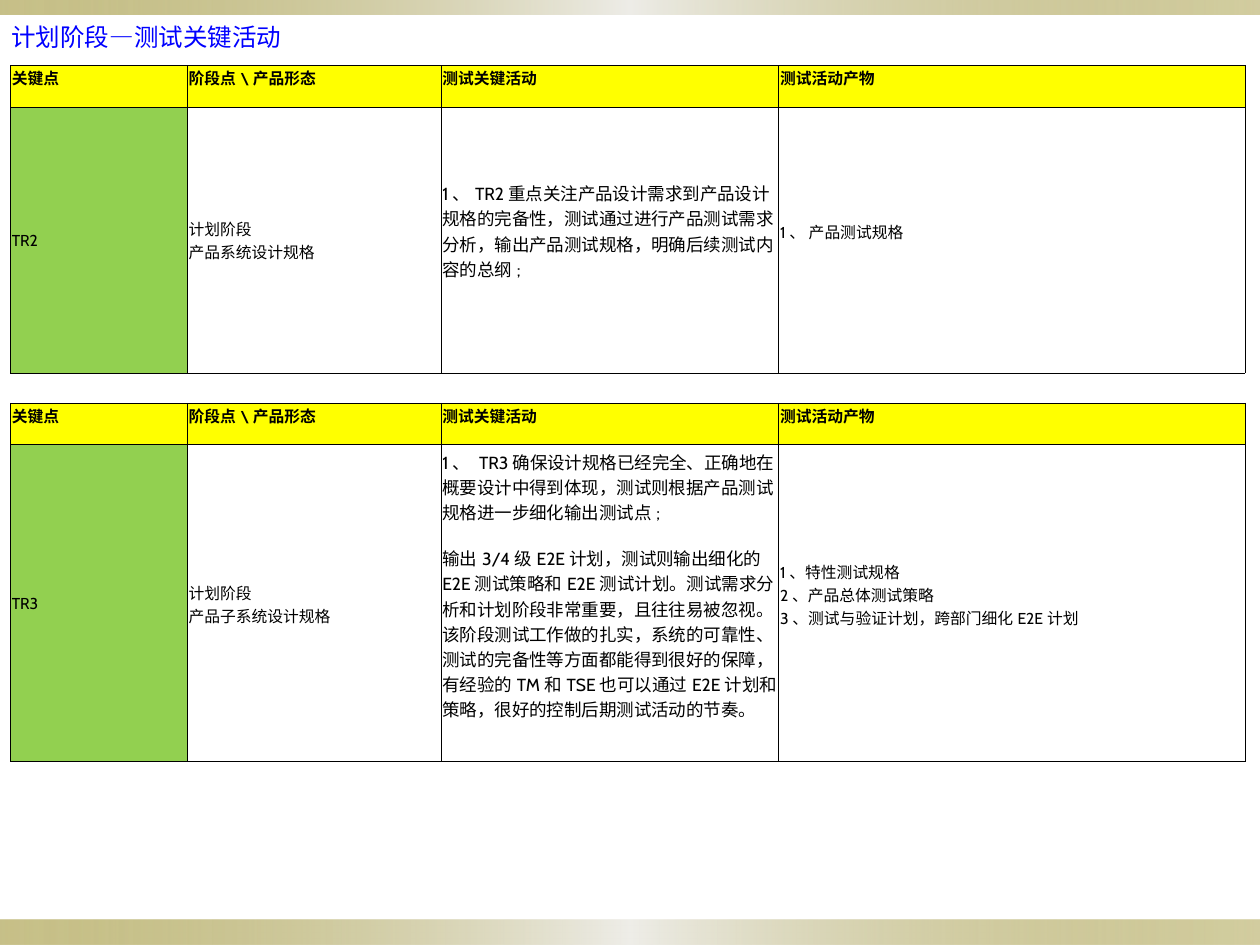
from dataclasses import dataclass

from lxml import etree
from pptx import Presentation
from pptx.dml.color import RGBColor
from pptx.enum.shapes import MSO_SHAPE
from pptx.enum.text import MSO_ANCHOR, MSO_AUTO_SIZE, PP_ALIGN
from pptx.oxml.ns import qn
from pptx.util import Pt

RECTANGLE = MSO_SHAPE.RECTANGLE
TOP, MIDDLE, BOTTOM = MSO_ANCHOR.TOP, MSO_ANCHOR.MIDDLE, MSO_ANCHOR.BOTTOM
LEFT = PP_ALIGN.LEFT
NO_AUTOFIT = MSO_AUTO_SIZE.NONE

BLUE = RGBColor(0x00, 0x00, 0xFF)
BLACK = RGBColor(0x00, 0x00, 0x00)
YELLOW = RGBColor(0xFF, 0xFF, 0x00)
GREEN = RGBColor(0x92, 0xD0, 0x50)
OLIVE = RGBColor(0x91, 0x84, 0x15)
PALE = RGBColor(0xEE, 0xED, 0xE8)

FONT = "Cabin"
SLIDE_WIDTH, SLIDE_HEIGHT = 720, 540
TABLE_LEFT = 6
COLUMN_WIDTHS = (101, 145, 193, 266.5)
HEADER_HEIGHT = 23.75
HEADERS = ("关键点", "阶段点\\产品形态", "测试关键活动", "测试活动产物")
BAR_STOPS = ((0, OLIVE, 50), (50, PALE, 100), (100, OLIVE, 40))


@dataclass(frozen=True)
class CellText:
    lines: tuple[str, ...]
    size: float = 9
    bold: bool = False
    anchor: MSO_ANCHOR = MIDDLE
    fill: RGBColor | None = None
    gap: float = 0
    bottom: float = 0


@dataclass(frozen=True)
class ReviewTable:
    top: float
    body_height: float
    body: tuple[CellText, ...]


TABLES = (
    ReviewTable(37.4, 152, (
        CellText(("TR2",), fill=GREEN),
        CellText(("计划阶段", "产品系统设计规格")),
        CellText(("1、TR2重点关注产品设计需求到产品设计规格的完备性，测试通过进行产品测试需求分析，"
                  "输出产品测试规格，明确后续测试内容的总纲;",), size=10, bottom=11),
        CellText(("1、 产品测试规格",), bottom=10),
    )),
    ReviewTable(230.4, 181, (
        CellText(("TR3",), fill=GREEN),
        CellText(("计划阶段", "产品子系统设计规格")),
        CellText(("1、 TR3确保设计规格已经完全、正确地在概要设计中得到体现，"
                  "测试则根据产品测试规格进一步细化输出测试点;",
                  "输出3/4级E2E计划，测试则输出细化的E2E测试策略和E2E测试计划。"
                  "测试需求分析和计划阶段非常重要，且往往易被忽视。该阶段测试工作做的扎实，"
                  "系统的可靠性、测试的完备性等方面都能得到很好的保障，"
                  "有经验的TM和TSE也可以通过E2E计划和策略，很好的控制后期测试活动的节奏。"),
                 size=10, gap=12, bottom=21),
        CellText(("1、特性测试规格", "2、产品总体测试策略",
                  "3、测试与验证计划，跨部门细化E2E计划"), bottom=10),
    )),
)


def add_bar(slide, top: float, height: float) -> None:
    bar = slide.shapes.add_shape(RECTANGLE, 0, Pt(top), Pt(SLIDE_WIDTH), Pt(height))
    bar.shadow.inherit = False
    bar.line.fill.background()
    bar.fill.gradient()
    bar.fill.gradient_angle = 0
    stops = bar._element.spPr.find(qn("a:gradFill")).find(qn("a:gsLst"))
    for stop in list(stops):
        stops.remove(stop)
    for position, color, opacity in BAR_STOPS:
        stop = etree.SubElement(stops, qn("a:gs"), pos=str(position * 1000))
        value = etree.SubElement(stop, qn("a:srgbClr"), val=str(color))
        etree.SubElement(value, qn("a:alpha"), val=str(opacity * 1000))


def add_title(slide, text: str) -> None:
    title = slide.shapes.title
    title.left, title.top, title.width, title.height = Pt(-0.7), Pt(8.6), Pt(703.5), Pt(24.5)
    frame = title.text_frame
    frame.text = text
    frame.auto_size = NO_AUTOFIT
    frame.vertical_anchor = BOTTOM
    paragraph = frame.paragraphs[0]
    paragraph.alignment = LEFT
    paragraph.font.name = FONT
    paragraph.font.size = Pt(14)
    paragraph.font.color.rgb = BLUE


def set_borders(cell) -> None:
    properties = cell._tc.get_or_add_tcPr()
    for index, side in enumerate(("lnL", "lnR", "lnT", "lnB")):
        line = etree.Element(qn(f"a:{side}"), w=str(Pt(0.5)))
        fill = etree.SubElement(line, qn("a:solidFill"))
        etree.SubElement(fill, qn("a:srgbClr"), val=str(BLACK))
        properties.insert(index, line)


def fill_cell(cell, content: CellText) -> None:
    cell.margin_left = cell.margin_right = cell.margin_top = Pt(0.75)
    cell.margin_bottom = Pt(content.bottom)
    cell.vertical_anchor = content.anchor
    if content.fill is None:
        cell.fill.background()
    else:
        cell.fill.solid()
        cell.fill.fore_color.rgb = content.fill
    set_borders(cell)
    cell.text_frame.text = "\n".join(content.lines)
    for index, paragraph in enumerate(cell.text_frame.paragraphs):
        paragraph.alignment = LEFT
        paragraph.space_before = Pt(content.gap if index else 0)
        font = paragraph.font
        font.name, font.size, font.bold = FONT, Pt(content.size), content.bold
        font.color.rgb = BLACK


def add_review_table(slide, review: ReviewTable) -> None:
    heights = (HEADER_HEIGHT, review.body_height)
    table = slide.shapes.add_table(
        len(heights), len(COLUMN_WIDTHS), Pt(TABLE_LEFT), Pt(review.top),
        Pt(sum(COLUMN_WIDTHS)), Pt(sum(heights))).table
    table.first_row = table.horz_banding = False
    for column, width in zip(table.columns, COLUMN_WIDTHS):
        column.width = Pt(width)
    header = tuple(CellText((text,), bold=True, anchor=TOP, fill=YELLOW) for text in HEADERS)
    for row, height, contents in zip(table.rows, heights, (header, review.body)):
        row.height = Pt(height)
        for cell, content in zip(row.cells, contents):
            fill_cell(cell, content)


def main() -> None:
    presentation = Presentation()
    presentation.slide_width, presentation.slide_height = Pt(SLIDE_WIDTH), Pt(SLIDE_HEIGHT)
    title_only = presentation.slide_layouts[5]
    slide = presentation.slides.add_slide(title_only)
    add_bar(slide, 525.4, 14.4)
    add_bar(slide, 0, 8.6)
    add_title(slide, "计划阶段—测试关键活动")
    for review in TABLES:
        add_review_table(slide, review)
    presentation.save("out.pptx")


if __name__ == "__main__":
    main()
